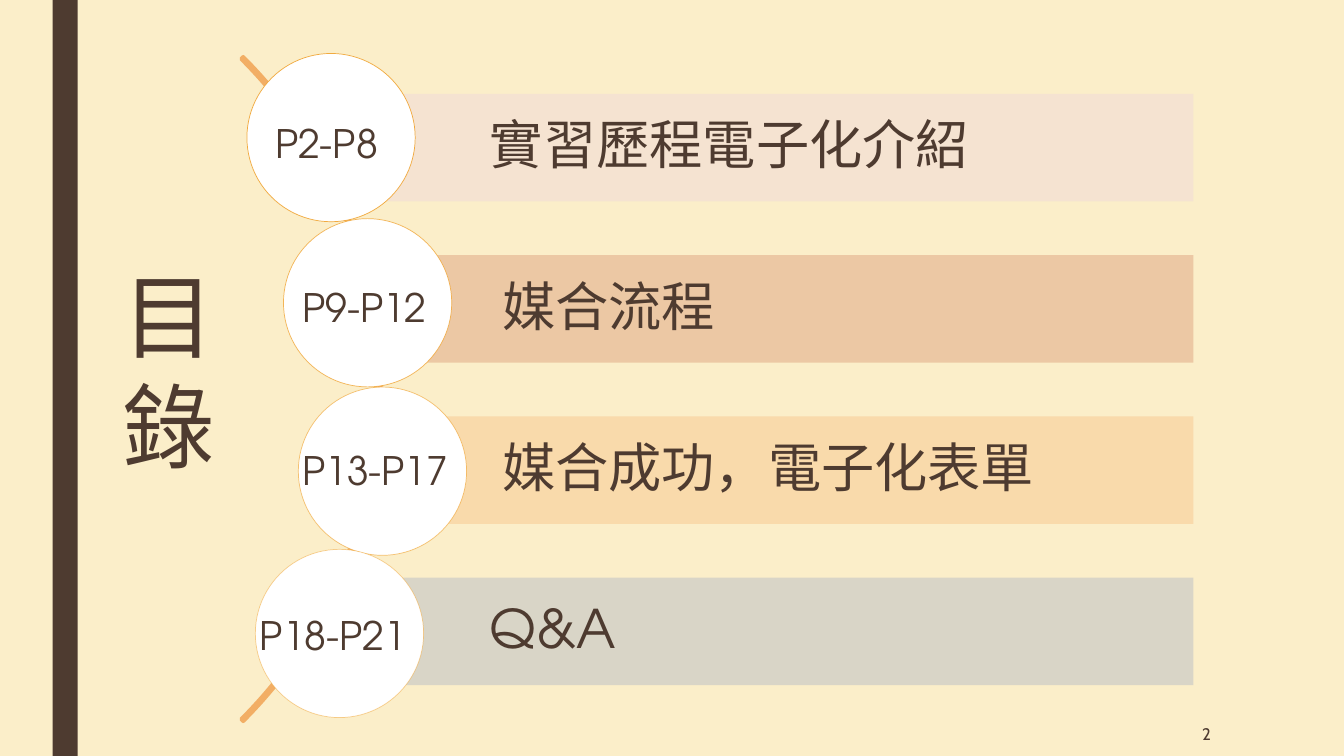
from lxml.etree import SubElement
from pptx import Presentation
from pptx.dml.color import RGBColor
from pptx.enum.shapes import MSO_SHAPE as Preset
from pptx.enum.text import MSO_ANCHOR as Anchor, MSO_AUTO_SIZE as AutoSize, PP_ALIGN as Align
from pptx.oxml.ns import qn
from pptx.util import Pt

INK = "4E3B30"
ORANGE = "F0A22E"
HEADING_FONT = "TeX Gyre Adventor"
NUMBER_FONT = "Cabin"


def color(hex_value):
    return RGBColor.from_string(hex_value)


class ContentsSlide:
    def __init__(self, presentation, background):
        self.slide = presentation.slides.add_slide(presentation.slide_layouts[5])
        fill = self.slide.background.fill
        fill.solid()
        fill.fore_color.rgb = color(background)

    def shape(self, preset, left, top, width, height, fill=None):
        shape = self.slide.shapes.add_shape(preset, Pt(left), Pt(top), Pt(width), Pt(height))
        shape.shadow.inherit = False
        shape.line.fill.background()
        if fill:
            shape.fill.solid()
            shape.fill.fore_color.rgb = color(fill)
        else:
            shape.fill.background()
        return shape

    def outline(self, shape, hex_value, width, opacity=100):
        shape.line.color.rgb = color(hex_value)
        shape.line.width = Pt(width)
        line = shape.line._get_or_add_ln()
        line.set("cap", "rnd")
        if opacity < 100:
            tint = line.find(".//" + qn("a:srgbClr"))
            SubElement(tint, qn("a:alpha"), val=str(opacity * 1000))

    def set_text(self, shape, lines, size, font=HEADING_FONT, align=Align.LEFT,
                 anchor=Anchor.TOP, spacing=1.0, before=0, after=0):
        frame = shape.text_frame
        frame.word_wrap = True
        frame.auto_size = AutoSize.NONE
        frame.vertical_anchor = anchor
        for index, text in enumerate(lines):
            paragraph = frame.add_paragraph() if index else frame.paragraphs[0]
            paragraph.alignment = align
            paragraph.line_spacing = spacing
            paragraph.space_before = Pt(before)
            paragraph.space_after = Pt(after)
            run = paragraph.add_run()
            run.text = text
            run.font.size = Pt(size)
            run.font.name = font
            run.font.color.rgb = color(INK)
            SubElement(run.font._element, qn("a:ea"), typeface=font)

    def title(self, lines, left, top, width, height):
        title = self.slide.shapes.title
        title.left, title.top = Pt(left), Pt(top)
        title.width, title.height = Pt(width), Pt(height)
        self.set_text(title, lines, 66, spacing=0.84, before=10, after=2)

    def text(self, text, left, top, width, height, size, **style):
        box = self.slide.shapes.add_textbox(Pt(left), Pt(top), Pt(width), Pt(height))
        self.set_text(box, [text], size, **style)

    def arc(self, left, top, diameter):
        arc = self.shape(Preset.BLOCK_ARC, left, top, diameter, diameter)
        for index, value in enumerate((189, 27, 0.003)):
            arc.adjustments[index] = value
        self.outline(arc, "F2AE65", 2.75)

    def bar(self, text, left, top, right, height, fill, text_left):
        bar = self.shape(Preset.RECTANGLE, left, top, right - left, height, fill)
        bar.text_frame.margin_left = Pt(text_left - left)
        self.set_text(bar, [text], 38, anchor=Anchor.MIDDLE, spacing=0.9)

    def circle(self, left, top, diameter, opacity):
        circle = self.shape(Preset.OVAL, left, top, diameter, diameter, "FFFFFF")
        self.outline(circle, ORANGE, 0.5, opacity)


OUTER = (221.8, 350)
INNER = (265.7, 358.6)
CHAPTERS = [
    ("實習歷程電子化介紹", "F5E3D1", OUTER, (176.4, 38.2), 90),
    ("媒合流程", "ECC8A4", INNER, (202.5, 156.2), 77),
    ("媒合成功，電子化表單", "F9DAAB", INNER, (213.1, 276.5), 63),
    ("Q&A", "D9D5C7", OUTER, (182.4, 392.4), 50),
]
PAGE_RANGES = [
    ("P2-P8", 189.4, 84.2, 106),
    ("P9-P12", 208.8, 201.6, 112.5),
    ("P13-P17", 208.8, 318.2, 128.5),
    ("P18-P21", 178.6, 435.6, 128.5),
]


def main():
    presentation = Presentation()
    presentation.slide_width, presentation.slide_height = Pt(960), Pt(540)
    contents = ContentsSlide(presentation, "FBEEC9")
    contents.shape(Preset.RECTANGLE, 37.5, 0, 18, 540, INK)
    contents.text("2", 746, 508.3, 126, 31.7, 12, font=NUMBER_FONT,
                  align=Align.RIGHT, anchor=Anchor.MIDDLE)
    contents.arc(-399, -57.6, 671)
    for index, (name, fill, (left, text_left), corner, opacity) in enumerate(CHAPTERS):
        contents.bar(name, left, 67 + 115.2 * index, 852.5, 76.8, fill, text_left)
        contents.circle(*corner, 120.2, opacity)
    contents.title(["目", "錄"], 80.6, 194.4, 94.3, 167.8)
    for pages, left, top, width in PAGE_RANGES:
        contents.text(pages, left, top, width, 29, 28, spacing=0.94, before=10, after=2)
    presentation.save("out.pptx")


if __name__ == "__main__":
    main()
